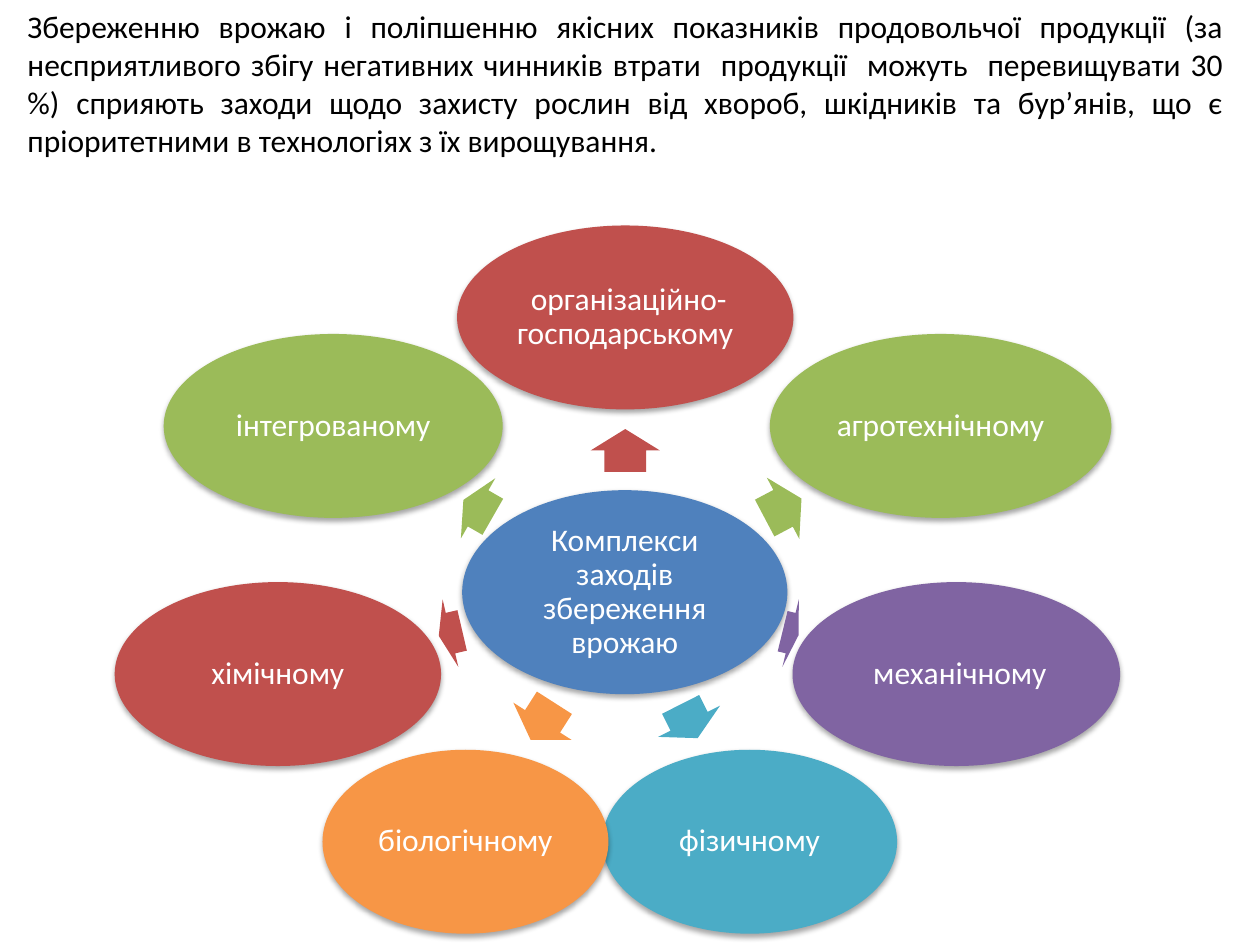
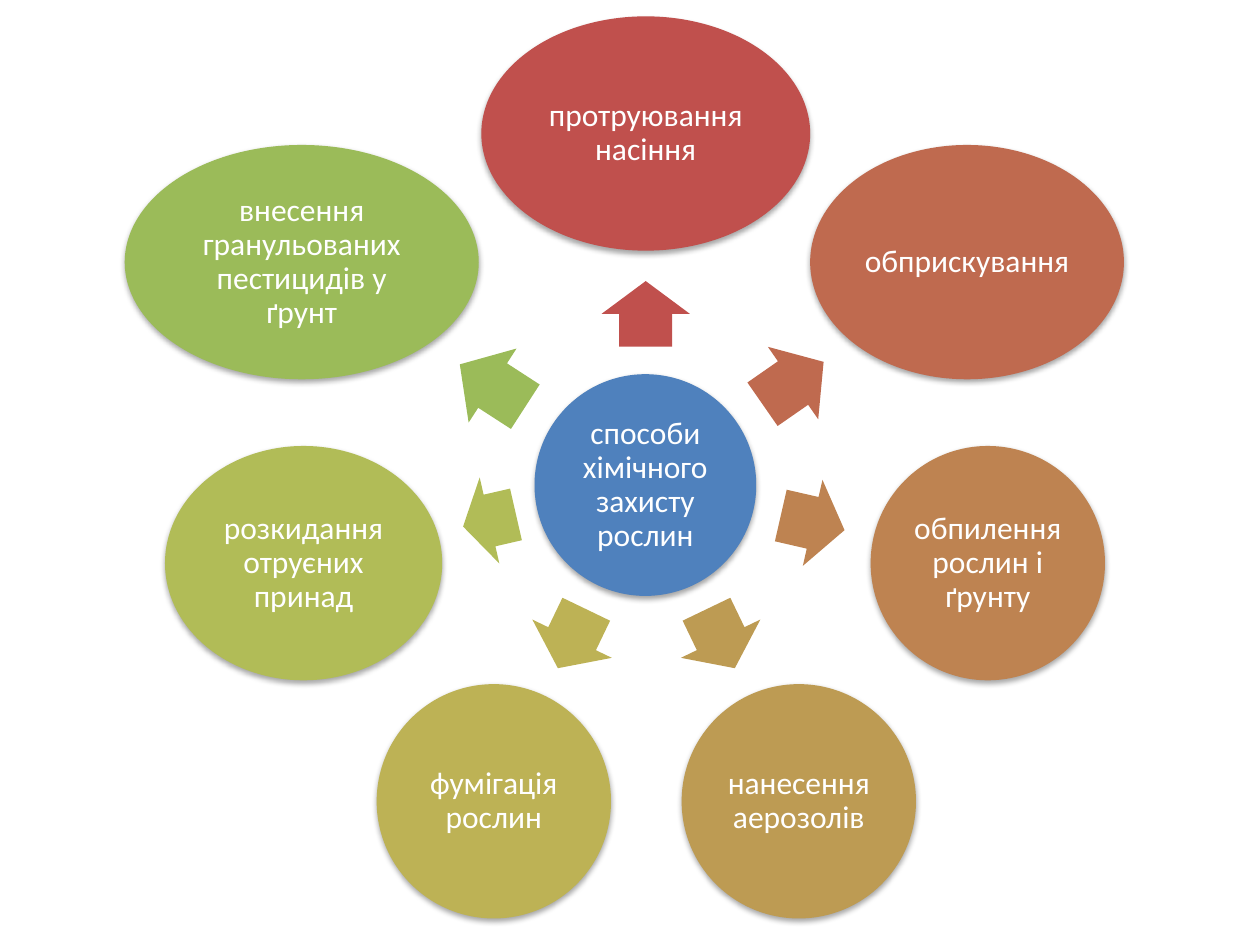
from lxml.etree import SubElement
from pptx import Presentation
from pptx.dml.color import RGBColor
from pptx.enum.shapes import MSO_SHAPE
from pptx.enum.text import MSO_ANCHOR, MSO_AUTO_SIZE, PP_ALIGN
from pptx.oxml.ns import qn
from pptx.util import Pt

# Shared colours and type
WHITE = RGBColor(0xFF, 0xFF, 0xFF)
BLACK = RGBColor(0x00, 0x00, 0x00)
BLUE = RGBColor(0x4F, 0x81, 0xBD)
RED = RGBColor(0xC0, 0x50, 0x4D)
GREEN = RGBColor(0x9B, 0xBB, 0x59)
PURPLE = RGBColor(0x80, 0x64, 0xA2)
TEAL = RGBColor(0x4B, 0xAC, 0xC6)
ORANGE = RGBColor(0xF7, 0x96, 0x46)
RUST = RGBColor(0xBF, 0x6A, 0x4F)
COPPER = RGBColor(0xBE, 0x83, 0x51)
BRONZE = RGBColor(0xBD, 0x9B, 0x53)
MUSTARD = RGBColor(0xBD, 0xB2, 0x55)
LIME = RGBColor(0xB1, 0xBC, 0x57)
FONT = "Calibri"
SIZE = Pt(18)

INTRO = (
    "Збереженню врожаю і поліпшенню якісних показників продовольчої продукції "
    "(за несприятливого збігу негативних чинників втрати  продукції  можуть  "
    "перевищувати 30 %) сприяють заходи щодо захисту рослин від хвороб, "
    "шкідників та бур’янів, що є пріоритетними в технологіях з їх вирощування."
)

# Hub: text, centre x, centre y, width, height
# Node: text, colour, centre x, centre y, width,
#       then its arrow: centre x, centre y, length, angle
WHEELS = [
    {
        "intro": INTRO,
        "hub": ("Комплекси заходів збереження врожаю", 357, 338.4, 185.8, 116.6),
        "tall": 105.1,
        "thick": 39.6,
        "nodes": [
            (" організаційно-господарському", RED, 357.3, 181.4, 192.2, 357.3, 257.4, 24.5, 270),
            ("агротехнічному", GREEN, 537.5, 243.4, 195.1, 447.5, 290.5, 23.8, 332.1),
            (" механічному", PURPLE, 546.5, 385.2, 187.2, 451.8, 361.8, 9.4, 13.7),
            ("фізичному", TEAL, 428.4, 481, 168.5, 393.8, 412.2, 21.6, 63.2),
            ("біологічному", ORANGE, 266, 481, 163.4, 310, 412.2, 25.2, 122.6),
            ("хімічному", RED, 158.8, 385.2, 186.5, 257.4, 361.8, 13.7, 166.9),
            ("інтегрованому", GREEN, 190.4, 243.4, 193.7, 273.2, 290.5, 19.4, 209.8),
        ],
    },
    {
        "intro": None,
        "hub": ("способи хімічного захисту рослин", 368.8, 277.2, 126.7, 126.7),
        "tall": 133.9,
        "thick": 50.4,
        "nodes": [
            ("протруювання насіння", RED, 369, 76.3, 187.9, 369, 179.3, 37.4, 270),
            ("обприскування", RUST, 552.6, 149.8, 179.3, 453.2, 218.9, 42.5, 325.2),
            ("обпилення рослин і ґрунту", COPPER, 564.5, 321.8, 133.9, 464.4, 298.8, 37.4, 12.9),
            ("нанесення аерозолів", BRONZE, 456.5, 457.9, 133.9, 411.8, 365, 37.4, 64.3),
            ("фумігація рослин", MUSTARD, 282.2, 457.9, 133.9, 326.9, 365, 37.4, 115.7),
            ("розкидання отруєних принад", LIME, 173.5, 321.8, 158.4, 279.7, 297.4, 31, 167.1),
            ("внесення гранульованих пестицидів у ґрунт", GREEN, 172.4, 149.8, 202.3,
             281.5, 220.3, 44.6, 212.9),
        ],
    },
]


def add_form(slide, kind, x, y, wide, tall, fill):
    """Add a plain filled shape centred on x, y."""
    form = slide.shapes.add_shape(
        kind, Pt(x - wide / 2), Pt(y - tall / 2), Pt(wide), Pt(tall))
    form.shadow.inherit = False
    form.fill.solid()
    form.fill.fore_color.rgb = fill
    form.line.fill.background()
    return form


def add_text(frame, text, color, align):
    """Write one run of text into a frame."""
    frame.word_wrap = True
    para = frame.paragraphs[0]
    para.alignment = align
    run = para.add_run()
    run.text = text
    run.font.name = FONT
    run.font.size = SIZE
    run.font.color.rgb = color
    return para


deck = Presentation()
deck.slide_width = Pt(720)
deck.slide_height = Pt(540)

for wheel in WHEELS:
    slide = deck.slides.add_slide(deck.slide_layouts[6])

    # Opening paragraph
    if wheel["intro"]:
        box = slide.shapes.add_textbox(Pt(8.6), Pt(0.7), Pt(697.7), Pt(94.3))
        add_text(box.text_frame, wheel["intro"], BLACK, PP_ALIGN.JUSTIFY)
        box.text_frame.auto_size = MSO_AUTO_SIZE.SHAPE_TO_FIT_TEXT

    # Hub first, then each arrow with its node
    text, x, y, wide, tall = wheel["hub"]
    ovals = [(text, BLUE, x, y, wide, tall, None)]
    for text, color, x, y, wide, *arrow in wheel["nodes"]:
        ovals.append((text, color, x, y, wide, wheel["tall"], arrow))

    for text, color, x, y, wide, tall, arrow in ovals:
        if arrow:
            mid_x, mid_y, length, angle = arrow
            mark = add_form(slide, MSO_SHAPE.RIGHT_ARROW, mid_x, mid_y,
                            length, wheel["thick"], color)
            mark.adjustments[0] = 0.6
            mark.adjustments[1] = 0.5
            mark.rotation = angle

        oval = add_form(slide, MSO_SHAPE.OVAL, x, y, wide, tall, color)
        frame = oval.text_frame
        frame.margin_left = frame.margin_right = Pt(1.8)
        frame.margin_top = frame.margin_bottom = Pt(1.8)
        frame.vertical_anchor = MSO_ANCHOR.MIDDLE
        para = add_text(frame, text, WHITE, PP_ALIGN.CENTER)
        para.line_spacing = 0.9

        # Soft shadow straight below
        effects = oval._element.spPr.find(qn("a:effectLst"))
        shade = SubElement(effects, qn("a:outerShdw"), blurRad=str(Pt(3.1)),
                           dist=str(Pt(1.8)), dir="5400000", rotWithShape="0")
        tint = SubElement(shade, qn("a:srgbClr"), val=str(BLACK))
        SubElement(tint, qn("a:alpha"), val="35000")

deck.save("out.pptx")
